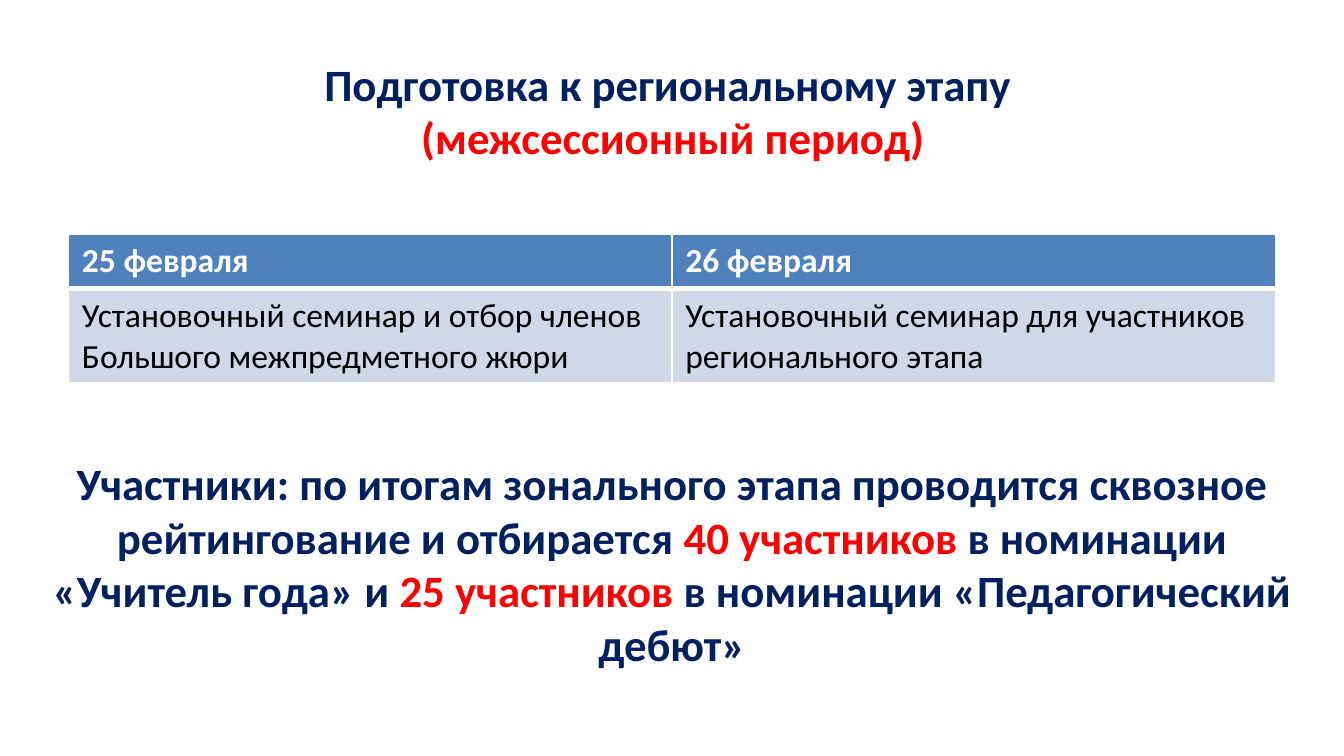
from lxml.etree import SubElement
from pptx import Presentation
from pptx.dml.color import RGBColor
from pptx.enum.text import MSO_AUTO_SIZE, PP_ALIGN
from pptx.oxml.ns import qn
from pptx.util import Inches, Pt

COLORS = {
    "navy": "002060",
    "red": "FF0000",
    "blue": "4F81BD",
    "pale": "D0D8E8",
    "white": "FFFFFF",
    "black": "000000",
}


def rgb(name):
    return RGBColor.from_string(COLORS[name])


def write(para, text, size=24, color="navy", bold=True, font="Calibri"):
    run = para.add_run()
    run.text = text
    run.font.name = font
    run.font.size = Pt(size)
    run.font.bold = bold
    run.font.color.rgb = rgb(color)


def border(cell, base):
    """Draw white cell borders, the bottom one `base` points wide."""
    props = cell._tc.get_or_add_tcPr()
    sides = {"lnL": 1, "lnR": 1, "lnT": 1, "lnB": base}
    for spot, (tag, width) in enumerate(sides.items()):
        line = SubElement(props, qn(f"a:{tag}"), w=str(Pt(width)))
        fill = SubElement(line, qn("a:solidFill"))
        SubElement(fill, qn("a:srgbClr"), val=COLORS["white"])
        props.insert(spot, line)


class Deck:
    def __init__(self, width, height):
        self.show = Presentation()
        self.show.slide_width = Inches(width)
        self.show.slide_height = Inches(height)
        self.slide = self.show.slides.add_slide(self.show.slide_layouts[6])

    def text(self, box, paras):
        """Add centred paragraphs, each a list of (text, color) runs."""
        frame = self.slide.shapes.add_textbox(*map(Inches, box)).text_frame
        frame.word_wrap = True
        frame.auto_size = MSO_AUTO_SIZE.SHAPE_TO_FIT_TEXT
        for i, runs in enumerate(paras):
            para = frame.add_paragraph() if i else frame.paragraphs[0]
            para.alignment = PP_ALIGN.CENTER
            for words, color in runs:
                write(para, words, color=color)

    def table(self, box, heights, rows):
        frame = self.slide.shapes.add_table(
            len(rows), len(rows[0]), *map(Inches, box))
        grid = frame.table
        for r, (height, row) in enumerate(zip(heights, rows)):
            grid.rows[r].height = Inches(height)
            head = r == 0
            for c, words in enumerate(row):
                cell = grid.cell(r, c)
                cell.fill.solid()
                cell.fill.fore_color.rgb = rgb("blue" if head else "pale")
                border(cell, 3 if head else 1)
                write(cell.text_frame.paragraphs[0], words, size=18,
                      color="white" if head else "black", bold=head)


def main():
    deck = Deck(10, 10 * 9 / 16)
    deck.text((0.83, 0.37, 8.35, 0.91), [
        [("Подготовка к региональному этапу ", "navy")],
        [("(межсессионный период)", "red")],
    ])
    deck.table((0.51, 1.74, 8.98, 1.11), (0.41, 0.7), [
        ("25 февраля", "26 февраля"),
        ("Установочный семинар и отбор членов Большого межпредметного жюри",
         "Установочный семинар для участников регионального этапа"),
    ])
    deck.text((0.12, 3.34, 9.76, 2.12), [[
        ("Участники: по итогам зонального этапа проводится сквозное "
         "рейтингование и отбирается ", "navy"),
        ("40 участников ", "red"),
        ("в номинации «Учитель года» и ", "navy"),
        ("25 участников ", "red"),
        ("в номинации «Педагогический дебют»", "navy"),
    ]])
    deck.show.save("out.pptx")


if __name__ == "__main__":
    main()
